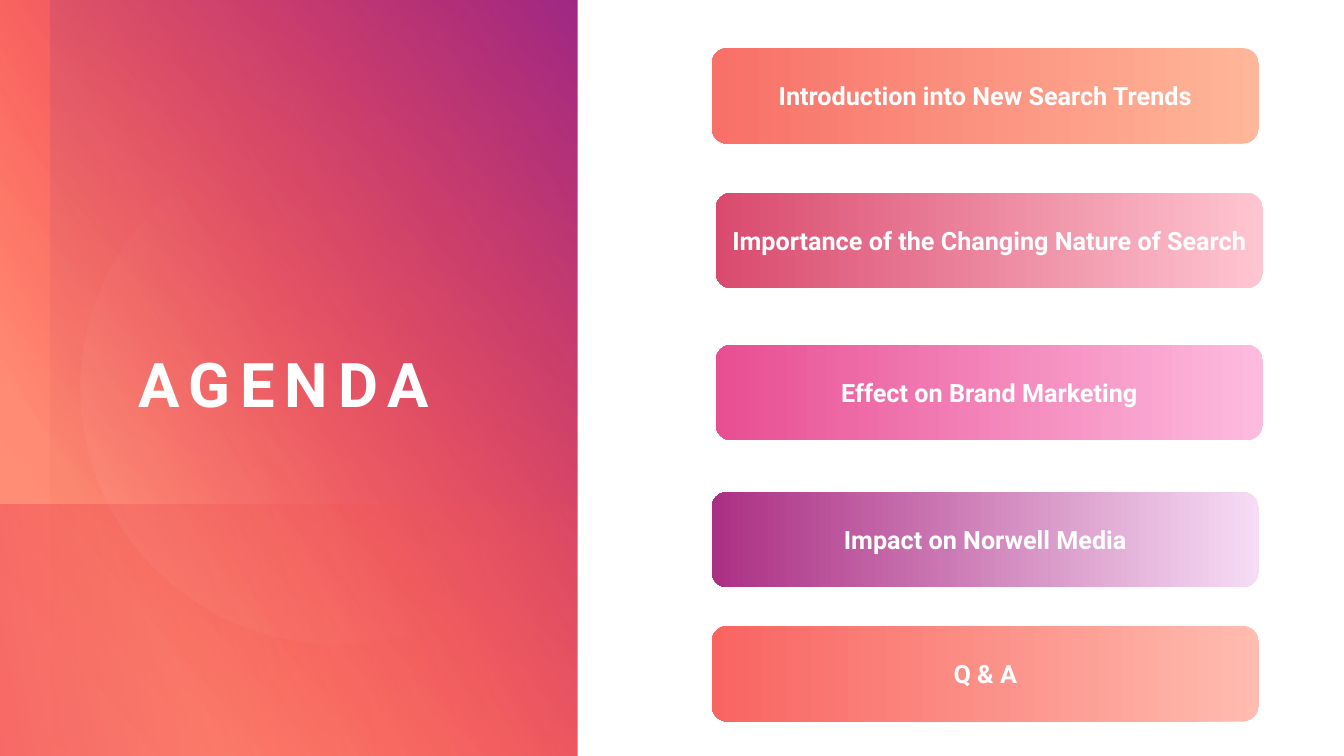
from dataclasses import dataclass

from lxml.etree import SubElement
from pptx import Presentation
from pptx.dml.color import RGBColor
from pptx.enum.shapes import MSO_SHAPE as Preset
from pptx.enum.text import MSO_ANCHOR as Anchor, MSO_AUTO_SIZE as AutoSize, PP_ALIGN as Align
from pptx.oxml.ns import qn
from pptx.util import Pt


@dataclass(frozen=True)
class Theme:
    """Colours, font and type sizes of the slide."""
    font: str = "Roboto"
    title_size: int = 44
    topic_size: int = 18
    title_tracking: int = 7
    white: str = "FFFFFF"
    purple: str = "92248E"
    orange: str = "FF8853"
    crimson: str = "FF0137"
    red: str = "E20030"
    salmon: str = "FF907A"
    coral: str = "FF6C4F"
    blush: str = "FFC5BD"
    topic_fades: tuple = (
        ("FFB699", "F87068"),
        ("FFC5D1", "D94A6E"),
        ("FEBBE0", "E84E92"),
        ("F6DCF5", "AB2F83"),
        ("FFBCAF", "F96461"),
    )


THEME = Theme()

TOPICS = (
    ("Introduction into New Search Trends", 508.3, 34.4),
    ("Importance of the Changing Nature of Search", 511.2, 137.7),
    ("Effect on Brand Marketing", 511.2, 246.3),
    ("Impact on Norwell Media", 508.3, 351.4),
    ("Q & A", 508.3, 447.2),
)
TOPIC_WIDTH, TOPIC_HEIGHT = 391, 68.2


def add_plain(slide, preset, box):
    """Add a shape without line or shadow."""
    shape = slide.shapes.add_shape(preset, *map(Pt, box))
    shape.shadow.inherit = False
    shape.line.fill.background()
    return shape


def fill_gradient(shape, stops, angle):
    """Fill with (position, colour, opacity) stops at a clockwise angle."""
    shape.fill.background()
    properties = shape._element.spPr
    no_fill = properties.find(qn("a:noFill"))
    gradient = SubElement(properties, qn("a:gradFill"), rotWithShape="1")
    properties.replace(no_fill, gradient)
    stop_list = SubElement(gradient, qn("a:gsLst"))
    for position, colour, opacity in stops:
        stop = SubElement(stop_list, qn("a:gs"), pos=str(position * 1000))
        rgb = SubElement(stop, qn("a:srgbClr"), val=colour)
        if opacity < 100:
            SubElement(rgb, qn("a:alpha"), val=str(opacity * 1000))
    SubElement(gradient, qn("a:lin"), ang=str(angle * 60000), scaled="0")


def add_glow(slide, preset, box, stops, angle, rotation, mirrored=True):
    """Add one translucent layer of the title panel."""
    glow = add_plain(slide, preset, box)
    glow.rotation = rotation
    if mirrored:
        glow._element.spPr.xfrm.set("flipH", "1")
    fill_gradient(glow, stops, angle)


def add_title_panel(slide):
    """Layer the gradients behind the title and trim their right edge."""
    add_glow(slide, Preset.RECTANGLE, (-1.5, 0, 480, 540.5),
             ((8, THEME.salmon, 100), (100, THEME.coral, 100)), 40, 180)
    add_glow(slide, Preset.RECTANGLE, (-2, 0, 482, 540),
             ((21, THEME.crimson, 0), (100, THEME.purple, 100)), 30, 180)
    add_glow(slide, Preset.RECTANGLE, (-12, 48, 540, 444),
             ((0, THEME.orange, 0), (100, THEME.purple, 50)), 150, 270)
    add_glow(slide, Preset.RECTANGLE, (0, 360, 480, 180),
             ((0, THEME.orange, 0), (100, THEME.red, 27)), 190, 180)
    add_glow(slide, Preset.OVAL, (57.6, 94.5, 365, 365),
             ((53, THEME.blush, 0), (100, THEME.blush, 14)), 280, 251.7)
    trim = add_plain(slide, Preset.RECTANGLE, (412.6, -0.5, 68.4, 541))
    trim.fill.solid()
    trim.fill.fore_color.rgb = RGBColor.from_string(THEME.white)


def write_centred(shape, text, size):
    """Write one bold white paragraph in the middle of a shape."""
    frame = shape.text_frame
    frame.text = text
    frame.word_wrap = True
    frame.auto_size = AutoSize.NONE
    frame.vertical_anchor = Anchor.MIDDLE
    paragraph = frame.paragraphs[0]
    paragraph.alignment = Align.CENTER
    font = paragraph.font
    font.name, font.size, font.bold = THEME.font, Pt(size), True
    font.color.rgb = RGBColor.from_string(THEME.white)
    return paragraph


def place_title(slide, text):
    """Bring the title in front of its panel and space out its letters."""
    title = slide.shapes.title
    slide.shapes._spTree.append(title._element)
    title.left, title.top, title.width, title.height = map(Pt, (57.6, 128.2, 290.2, 285.1))
    paragraph = write_centred(title, text, THEME.title_size)
    paragraph.line_spacing = 1.1
    letters = paragraph._p.pPr.find(qn("a:defRPr"))
    letters.set("spc", str(THEME.title_tracking * 100))


def add_topic(slide, text, left, top, fade):
    """Add one agenda topic that fades from right to left."""
    topic = add_plain(slide, Preset.ROUNDED_RECTANGLE, (left, top, TOPIC_WIDTH, TOPIC_HEIGHT))
    light, dark = fade
    fill_gradient(topic, ((0, light, 100), (100, dark, 100)), 180)
    write_centred(topic, text, THEME.topic_size)


def main():
    """Build and save the agenda slide."""
    deck = Presentation()
    deck.slide_width, deck.slide_height = Pt(960), Pt(540)
    slide = deck.slides.add_slide(deck.slide_layouts[5])
    add_title_panel(slide)
    place_title(slide, "AGENDA")
    for (text, left, top), fade in zip(TOPICS, THEME.topic_fades):
        add_topic(slide, text, left, top, fade)
    deck.save("out.pptx")


if __name__ == "__main__":
    main()
